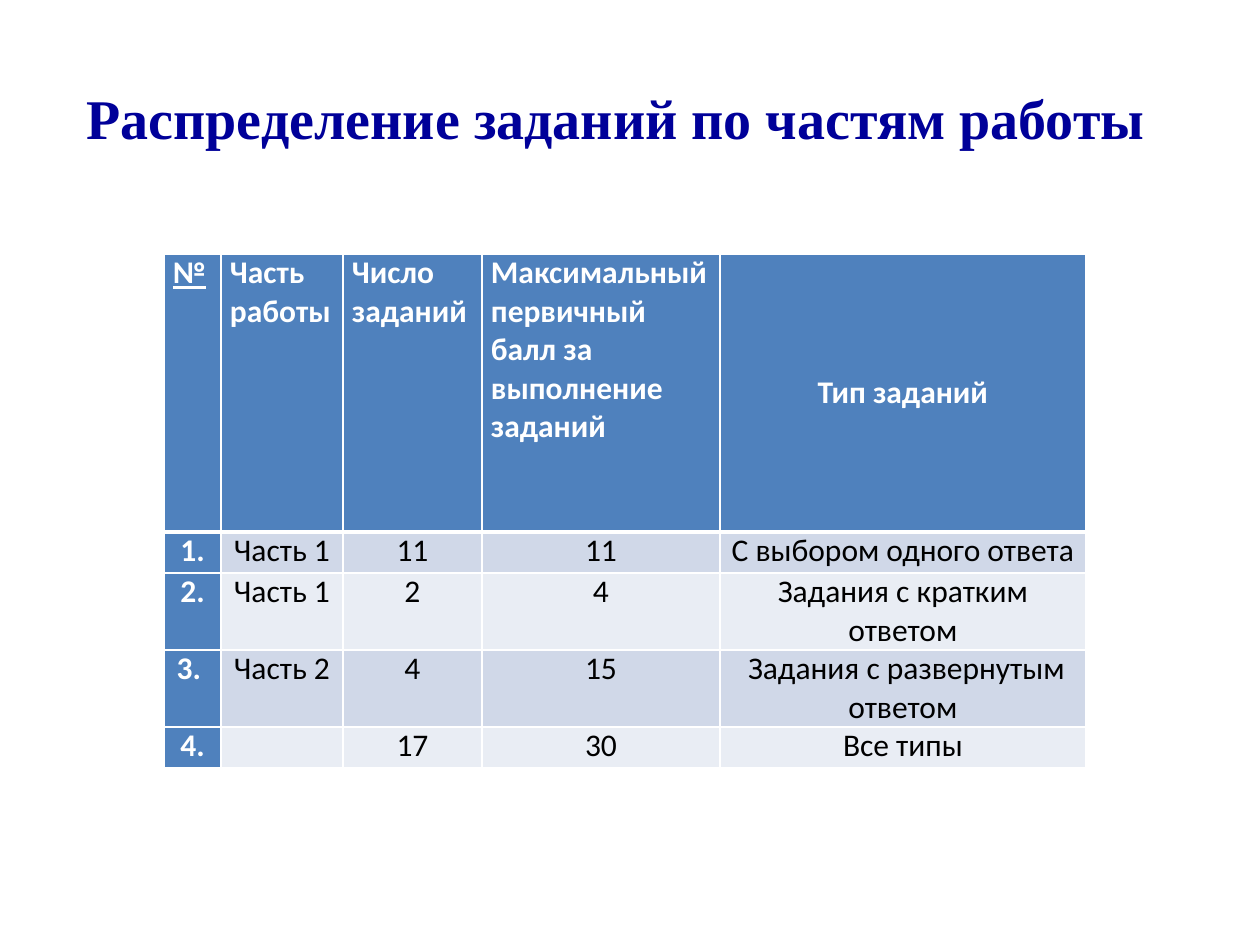
from lxml.etree import SubElement
from pptx import Presentation
from pptx.dml.color import RGBColor
from pptx.enum.text import MSO_ANCHOR as Anchor, PP_ALIGN as Align
from pptx.oxml.ns import qn
from pptx.util import Emu, Pt

PX = 914400 // 126
WHITE, BLACK, NAVY, BLUE = "FFFFFF", "000000", "000099", "4F81BD"
BANDS = ("D0D8E8", "E9EDF4")

COLUMN_WIDTHS = (57, 122, 139, 238, 366)
ROW_HEIGHTS = (278, 41, 77, 77, 41)
TASKS = (
    ("№", "Часть работы", "Число заданий",
     "Максимальный первичный балл за выполнение заданий", "Тип заданий"),
    ("1.", "Часть 1", "11", "11", "С выбором одного ответа"),
    ("2.", "Часть 1", "2", "4", "Задания с кратким ответом"),
    ("3. ", "Часть 2", "4", "15", " Задания с развернутым ответом"),
    ("4.", "", "17", "30", "Все типы"),
)


def px(length):
    return Emu(length * PX)


def color(value):
    return RGBColor.from_string(value)


def write(frame, text, font="Calibri", size=18, ink=BLACK, bold=False,
          underline=False, align=Align.CENTER):
    paragraph = frame.paragraphs[0]
    paragraph.alignment = align
    if not text:
        paragraph.font.size = Pt(size)
        return
    run = paragraph.add_run()
    run.text = text
    run.font.name = font
    run.font.size = Pt(size)
    run.font.bold = bold
    run.font.underline = underline
    run.font.color.rgb = color(ink)


def set_borders(cell, top=1, bottom=1):
    """Draw white borders; widths are in points. Call before setting the fill."""
    properties = cell._tc.get_or_add_tcPr()
    for side, width in (("L", 1), ("R", 1), ("T", top), ("B", bottom)):
        line = SubElement(properties, qn(f"a:ln{side}"), w=str(Pt(width)))
        fill = SubElement(line, qn("a:solidFill"))
        SubElement(fill, qn("a:srgbClr"), val=WHITE)


def add_title(slide, text):
    box = slide.shapes.add_textbox(px(68), px(77), px(1124), px(81))
    frame = box.text_frame
    frame.word_wrap = True
    frame.vertical_anchor = Anchor.MIDDLE
    frame.margin_right = px(40)
    write(frame, text, font="Times New Roman", size=32, ink=NAVY, bold=True)


def fill_cell(cell, text, row, column):
    header, last = row == 0, column == len(COLUMN_WIDTHS) - 1
    accent = header or column == 0
    cell.margin_left = cell.margin_right = px(9)
    cell.margin_top = cell.margin_bottom = 0
    cell.vertical_anchor = Anchor.MIDDLE if header and last else Anchor.TOP
    set_borders(cell, top=3 if row == 1 else 1, bottom=3 if header else 1)
    cell.fill.solid()
    cell.fill.fore_color.rgb = color(BLUE if accent else BANDS[(row - 1) % 2])
    write(cell.text_frame, text, ink=WHITE if accent else BLACK, bold=accent,
          underline=header and column == 0,
          align=Align.LEFT if header and not last else Align.CENTER)


def add_task_table(slide):
    table = slide.shapes.add_table(
        len(ROW_HEIGHTS), len(COLUMN_WIDTHS), px(164), px(254),
        px(sum(COLUMN_WIDTHS)), px(sum(ROW_HEIGHTS))).table
    for column, width in zip(table.columns, COLUMN_WIDTHS):
        column.width = px(width)
    for row, height in zip(table.rows, ROW_HEIGHTS):
        row.height = px(height)
    for row, texts in enumerate(TASKS):
        for column, text in enumerate(texts):
            fill_cell(table.cell(row, column), text, row, column)


def main():
    deck = Presentation()
    deck.slide_width, deck.slide_height = px(1260), px(945)
    slide = deck.slides.add_slide(deck.slide_layouts[6])
    add_task_table(slide)
    add_title(slide, "Распределение заданий по частям работы")
    deck.save("out.pptx")


if __name__ == "__main__":
    main()
